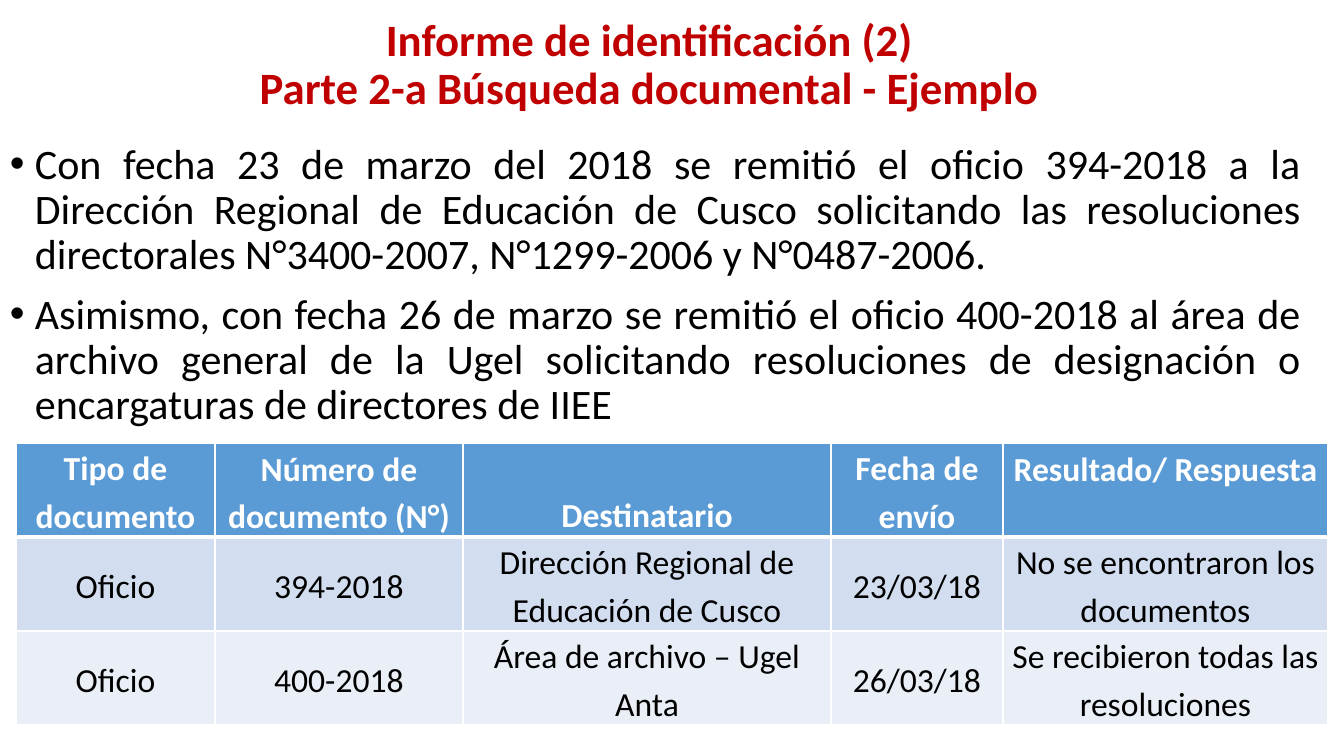
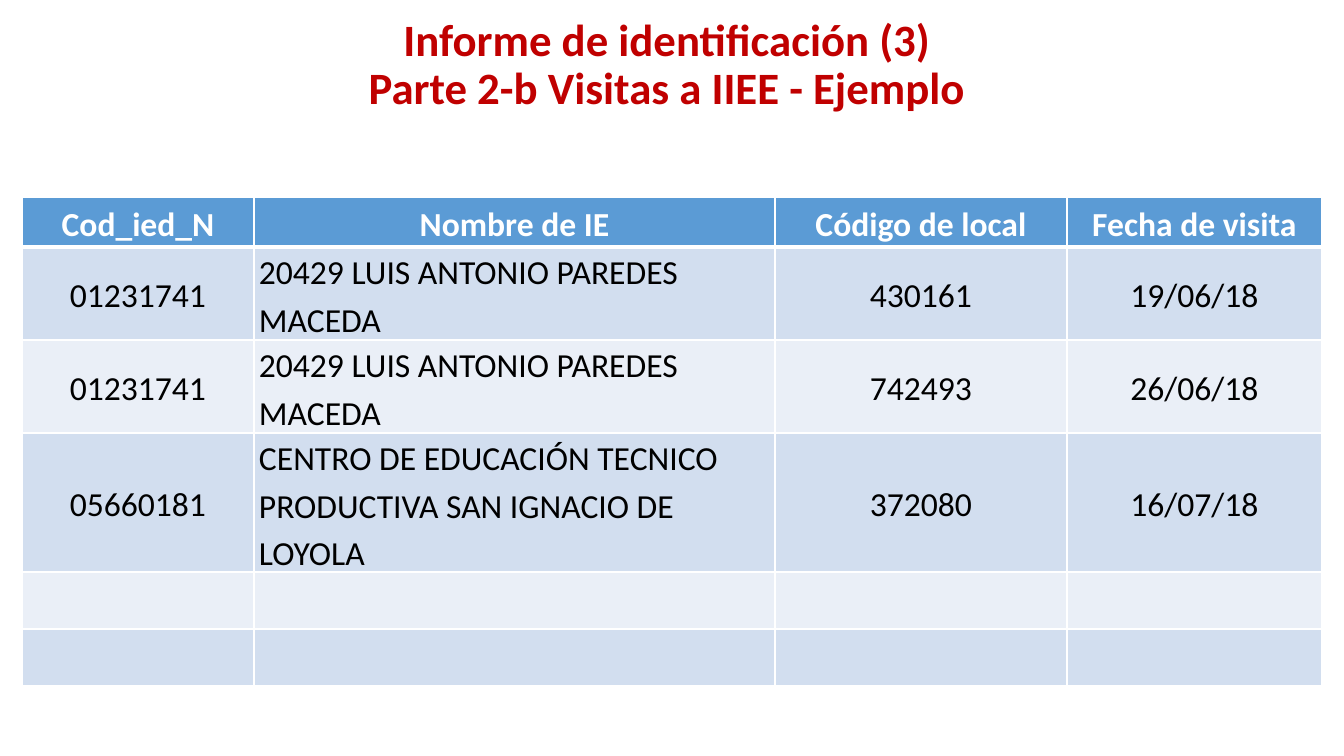
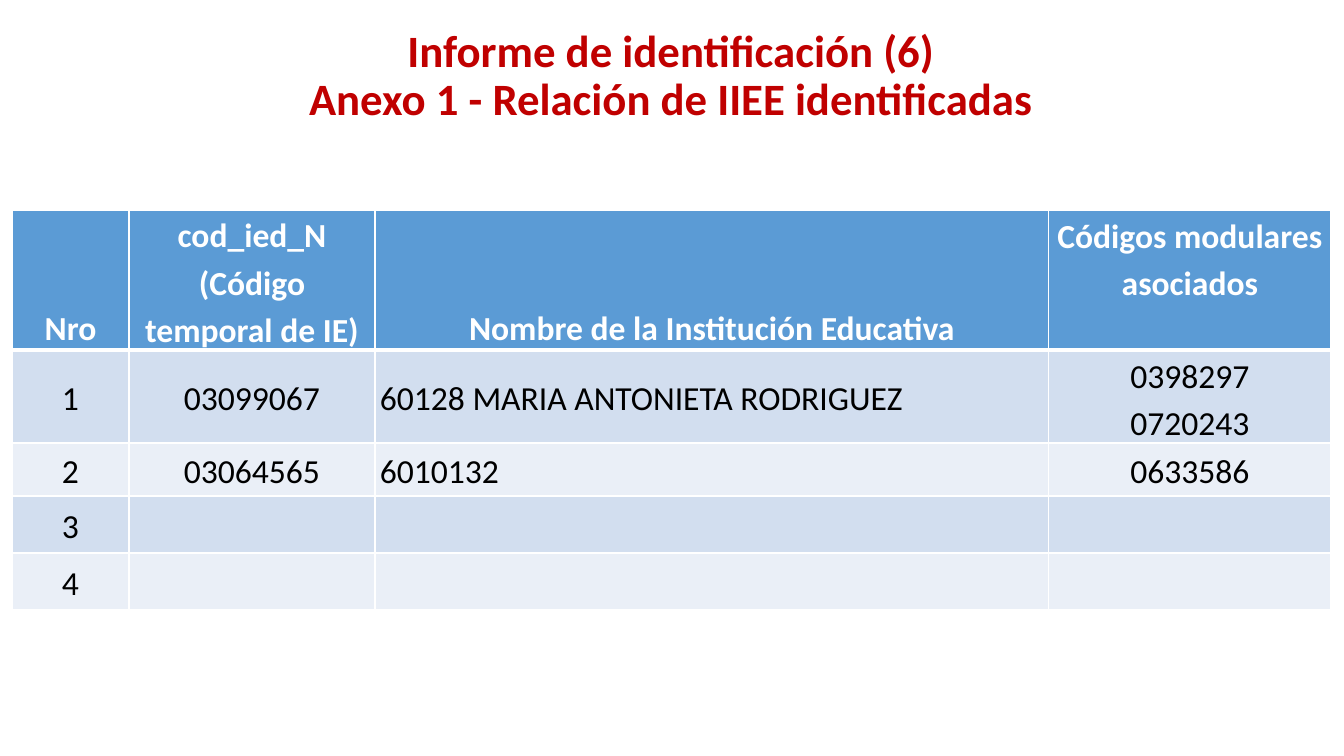
import dataclasses

import pptx
import pptx.dml.color
import pptx.enum.text
import pptx.oxml
import pptx.oxml.ns
import pptx.util

ALIGN = pptx.enum.text.PP_ALIGN
ANCHOR = pptx.enum.text.MSO_ANCHOR
TOP, MID, LOW = ANCHOR.TOP, ANCHOR.MIDDLE, ANCHOR.BOTTOM
SCALE = 914400 / 100.8


@dataclasses.dataclass(frozen=True)
class Theme:
    face: str = "Calibri"
    title: str = "C00000"
    text: str = "000000"
    white: str = "FFFFFF"
    head: str = "5B9BD5"
    bands: tuple = ("D2DEEF", "EAEFF7")
    title_size: int = 32
    body_size: int = 30
    cell_size: int = 24
    thin: int = 1
    thick: int = 3


def px(count):
    return pptx.util.Emu(round(count * SCALE))


def color(code):
    return pptx.dml.color.RGBColor.from_string(code)


class Deck:
    """Holds the style and the slide being filled."""

    def __init__(self, theme):
        self.theme = theme
        self.show = pptx.Presentation()
        self.show.slide_width, self.show.slide_height = px(1344), px(756)
        self.slide = None

    def start(self):
        self.slide = self.show.slides.add_slide(self.show.slide_layouts[6])

    def run(self, para, text, size, tint, bold=False):
        run = para.add_run()
        run.text = text
        font = run.font
        font.name, font.size, font.bold = self.theme.face, pptx.util.Pt(size), bold
        font.color.rgb = color(tint)

    def box(self, left, top, width, height):
        frame = self.slide.shapes.add_textbox(*map(px, (left, top, width, height))).text_frame
        frame.word_wrap = True
        return frame

    def title(self, left, top, width, lines):
        frame = self.box(left, top, width, 108)
        frame.vertical_anchor = MID
        para = frame.paragraphs[0]
        para.alignment, para.line_spacing = ALIGN.CENTER, 0.9
        for order, line in enumerate(lines):
            if order:
                para.add_line_break()
            self.run(para, line, self.theme.title_size, self.theme.title, True)

    def bullets(self, left, top, width, height, items):
        frame = self.box(left, top, width, height)
        for order, item in enumerate(items):
            para = frame.add_paragraph() if order else frame.paragraphs[0]
            props = para._p.get_or_add_pPr()
            props.set("marL", str(px(25)))
            props.set("indent", str(-px(25)))
            mark = pptx.oxml.ns.nsdecls("a")
            props.append(pptx.oxml.parse_xml(f'<a:buFont {mark} typeface="Arial"/>'))
            props.append(pptx.oxml.parse_xml(f'<a:buChar {mark} char="•"/>'))
            para.alignment, para.line_spacing = ALIGN.JUSTIFY, 0.9
            para.space_before = pptx.util.Pt(10 if order else 0)
            self.run(para, item, self.theme.body_size, self.theme.text)

    def edge(self, cell, row):
        """Draw white borders, with a thick one below the header."""
        thick = {0: "B", 1: "T"}.get(row)
        for side in "LRTB":
            points = self.theme.thick if side == thick else self.theme.thin
            cell._tc.get_or_add_tcPr().append(pptx.oxml.parse_xml(
                f'<a:ln{side} {pptx.oxml.ns.nsdecls("a")} w="{pptx.util.Pt(points)}">'
                f'<a:solidFill><a:srgbClr val="{self.theme.white}"/></a:solidFill>'
                f'</a:ln{side}>'))

    def cell(self, cell, text, row, anchor, align):
        self.edge(cell, row)
        look = self.theme
        cell.fill.solid()
        cell.fill.fore_color.rgb = color(look.bands[(row - 1) % 2] if row else look.head)
        cell.margin_left = cell.margin_right = px(5)
        cell.margin_top = cell.margin_bottom = 0
        cell.vertical_anchor = anchor
        if not text:
            return
        frame = cell.text_frame
        for order, line in enumerate(text.split("\n")):
            para = frame.add_paragraph() if order else frame.paragraphs[0]
            para.alignment, para.line_spacing = align, 1.15
            self.run(para, line, look.cell_size, look.text if row else look.white, not row)

    def table(self, left, top, widths, heights, rows, anchors, name=None):
        """Anchors are for the header; name is the column with left-aligned text."""
        area = (left, top, sum(widths), sum(heights))
        grid = self.slide.shapes.add_table(len(rows), len(widths), *map(px, area)).table
        for column, width in zip(grid.columns, widths):
            column.width = px(width)
        for line, height in zip(grid.rows, heights):
            line.height = px(height)
        for row, texts in enumerate(rows):
            for col, text in enumerate(texts):
                align = ALIGN.LEFT if row and col == name else ALIGN.CENTER
                anchor = MID if row else anchors[col]
                self.cell(grid.cell(row, col), text, row, anchor, align)


def search(deck):
    deck.start()
    deck.title(152, 12, 995, ["Informe de identificación (2)",
                              "Parte 2-a Búsqueda documental - Ejemplo"])
    deck.bullets(0, 138, 1312, 285, [
        "Con fecha 23 de marzo del 2018 se remitió el oficio 394-2018 a la Dirección "
        "Regional de Educación de Cusco solicitando las resoluciones directorales "
        "N°3400-2007, N°1299-2006 y N°0487-2006.",
        "Asimismo, con fecha 26 de marzo se remitió el oficio 400-2018 al área de archivo "
        "general de la Ugel solicitando resoluciones de designación o encargaturas de "
        "directores de IIEE",
    ])
    deck.table(16, 443, [199, 248, 368, 172, 325], [94] * 3, [
        ["Tipo de documento", "Número de documento (N°)", "Destinatario",
         "Fecha de envío", "Resultado/ Respuesta"],
        ["Oficio", "394-2018", "Dirección Regional de Educación de Cusco",
         "23/03/18", "No se encontraron los documentos"],
        ["Oficio", "400-2018", "Área de archivo – Ugel Anta",
         "26/03/18", "Se recibieron todas las resoluciones"],
    ], [LOW, MID, LOW, LOW, TOP])


def visits(deck):
    deck.start()
    deck.title(246, 12, 842, ["Informe de identificación (3)",
                              "Parte 2-b Visitas a IIEE - Ejemplo"])
    deck.table(22, 197, [232, 521, 292, 255], [50, 93, 93, 139, 57, 57], [
        ["Cod_ied_N", "Nombre de IE", "Código de local", "Fecha de visita"],
        ["01231741", "20429 LUIS ANTONIO PAREDES MACEDA", "430161", "19/06/18"],
        ["01231741", "20429 LUIS ANTONIO PAREDES MACEDA", "742493", "26/06/18"],
        ["05660181", "CENTRO DE EDUCACIÓN TECNICO PRODUCTIVA SAN IGNACIO DE LOYOLA",
         "372080", "16/07/18"],
        [""] * 4,
        [""] * 4,
    ], [MID] * 4, name=1)


def annex(deck):
    deck.start()
    deck.title(59, 23, 1224, ["Informe de identificación (6)",
                              "Anexo 1 - Relación de IIEE identificadas"])
    deck.table(12, 210, [117, 246, 674, 282], [140, 93, 53, 57, 57], [
        ["Nro", "cod_ied_N\n(Código temporal de IE)",
         "Nombre de la Institución Educativa", "Códigos modulares asociados"],
        ["1", "03099067", "60128 MARIA ANTONIETA RODRIGUEZ", "0398297\n0720243"],
        ["2", "03064565", "6010132", "0633586"],
        ["3", "", "", ""],
        ["4", "", "", ""],
    ], [LOW, LOW, LOW, TOP], name=2)


def main():
    deck = Deck(Theme())
    for build in (search, visits, annex):
        build(deck)
    deck.show.save("out.pptx")


if __name__ == "__main__":
    main()
